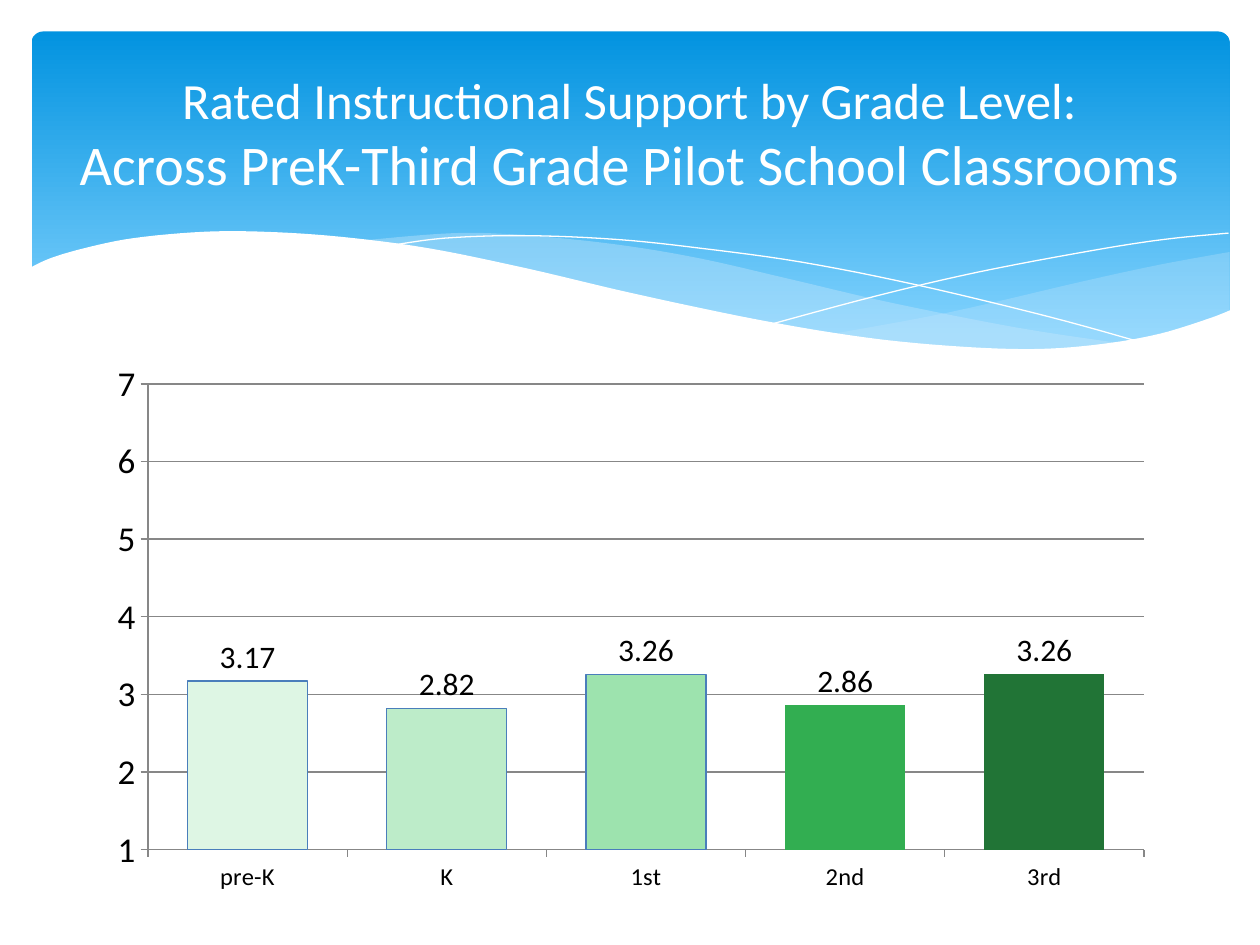
import pptx
import pptx.chart.data
import pptx.dml.color
import pptx.enum.chart
import pptx.enum.shapes
import pptx.enum.text
import pptx.oxml
import pptx.oxml.ns
import pptx.util
from lxml import etree

COLORS = {
    "white": "FFFFFF", "black": "000000", "sky_top": "0293E0", "sky_bottom": "83D3FE",
    "swell": "C6E7FC", "series": "31B6FD", "outline": "4A7EBB", "grid": "878787",
}
GRADES = {
    "pre-K": (3.17, "DEF6E4"), "K": (2.82, "BDECC9"), "1st": (3.26, "9DE3AE"),
    "2nd": (2.86, "32AE51"), "3rd": (3.26, "217436"),
}
OUTLINED_BARS = 3
FONT = "Calibri"
UNIT = pptx.util.Inches(0.25)
COLUMNS, ROWS = 40, 30

RIGHT_SWELL = [
    [(39.04, 8), (36.84, 8.4), (34.44, 8.92), (30.12, 9.92), (26.44, 10.6)],
    [(26.44, 10.6), (28.76, 10.88), (31.24, 11.08), (33.4, 11.08), (35.24, 10.92),
     (37.12, 10.52), (38.52, 10.08), (39.04, 9.88)],
]
LEFT_SWELL = [
    [(35.72, 10.92), (32.28, 10.4), (28.24, 9.6), (25.16, 8.88), (22.2, 8.2),
     (19.56, 7.76), (16.8, 7.48), (14.44, 7.4), (11.44, 7.64)],
    [(11.44, 7.64), (14.48, 8.12), (17.96, 8.88), (22.64, 9.92), (26, 10.56),
     (28.9, 10.96), (31.84, 11.12), (33.92, 11.08), (35.72, 10.92)],
]
FALLING_LINE = [[(12.36, 7.8), (14.12, 7.56), (16.64, 7.48), (19.56, 7.6), (22.24, 7.88),
                 (25.44, 8.32), (29.08, 9.04), (33.24, 10.04), (36.28, 10.88)]]
RISING_LINE = [[(24.52, 10.28), (27.8, 9.4), (31.04, 8.64), (34.64, 7.96),
                (36.96, 7.6), (39, 7.4)]]
WAVE = [
    [(0.92, 8.52), (1.6, 8.2), (2.68, 7.88), (4.24, 7.56), (6.44, 7.36), (8.44, 7.36),
     (10.84, 7.52), (13.6, 7.88), (16.72, 8.52), (20.12, 9.32), (24.12, 10.16),
     (27.52, 10.72), (30.44, 11), (32.92, 11.08), (35, 10.92), (36.8, 10.6),
     (38.36, 10.12), (39.08, 9.84)],
    [(39.08, 13.16), (0.92, 13.16)],
]


def color(name):
    return pptx.dml.color.RGBColor.from_string(COLORS.get(name, name))


def cells(*lengths):
    return [round(length * UNIT) for length in lengths]


def smooth(points, steps=6):
    padded = [points[0], *points, points[-1]]
    curve = [points[0]]
    for a, b, c, d in zip(padded, padded[1:], padded[2:], padded[3:]):
        for step in range(1, steps + 1):
            t = step / steps
            curve.append(tuple(
                q + t * (r - p) / 2 + t * t * (2 * p - 5 * q + 4 * r - s) / 2
                + t ** 3 * (3 * q - p - 3 * r + s) / 2
                for p, q, r, s in zip(a, b, c, d)))
    return curve


def add_outline(slide, curves, fill=None, opacity=100):
    points = [cells(*point) for curve in curves for point in smooth(curve)]
    builder = slide.shapes.build_freeform(*points[0], scale=1.0)
    builder.add_line_segments(points[1:], close=fill is not None)
    shape = builder.convert_to_shape()
    shape.shadow.inherit = False
    if fill is None:
        shape.fill.background()
        shape.line.color.rgb = color("white")
        shape.line.width = pptx.util.Pt(0)
        return
    shape.line.fill.background()
    shape.fill.solid()
    shape.fill.fore_color.rgb = color(fill)
    if opacity < 100:
        value = shape.fill._xPr.find(".//" + pptx.oxml.ns.qn("a:srgbClr"))
        etree.SubElement(value, pptx.oxml.ns.qn("a:alpha"), val=str(opacity * 1000))


def add_panel(slide):
    shape = slide.shapes.add_shape(
        pptx.enum.shapes.MSO_SHAPE.ROUNDED_RECTANGLE, *cells(1, 1, 38.04, 10.8))
    shape.adjustments[0] = 0.034
    shape.shadow.inherit = False
    shape.line.fill.background()
    shape.fill.gradient()
    shape.fill.gradient_angle = 270
    stops = zip(shape.fill.gradient_stops, ("sky_top", "sky_bottom"), (0, 0.9))
    for stop, name, position in stops:
        stop.color.rgb = color(name)
        stop.position = position


def add_title(slide, lines, sizes):
    text_frame = slide.shapes.add_textbox(*cells(1, 1.48, 38, 5.48)).text_frame
    text_frame.word_wrap = True
    text_frame.vertical_anchor = pptx.enum.text.MSO_ANCHOR.MIDDLE
    paragraph = text_frame.paragraphs[0]
    paragraph.text = "\v".join(lines)
    paragraph.alignment = pptx.enum.text.PP_ALIGN.CENTER
    for run, size in zip(paragraph.runs, sizes):
        style_font(run.font, size, "white")


def style_font(font, size, name="black"):
    font.name = FONT
    font.size = pptx.util.Pt(size)
    font.color.rgb = color(name)


def style_axis(axis, size):
    axis.major_tick_mark = pptx.enum.chart.XL_TICK_MARK.OUTSIDE
    axis.minor_tick_mark = pptx.enum.chart.XL_TICK_MARK.NONE
    axis.format.line.color.rgb = color("grid")
    style_font(axis.tick_labels.font, size)


def place_plot(chart, **shares):
    plot_area = chart._chartSpace.chart.plotArea
    for old in plot_area.findall(pptx.oxml.ns.qn("c:layout")):
        plot_area.remove(old)
    modes = "".join(f'<c:{axis}Mode val="edge"/>' for axis in "xy")
    sizes = "".join(f'<c:{key} val="{share}"/>' for key, share in shares.items())
    plot_area.insert(0, pptx.oxml.parse_xml(
        f'<c:layout {pptx.oxml.ns.nsdecls("c")}><c:manualLayout>'
        f'<c:layoutTarget val="inner"/>{modes}{sizes}</c:manualLayout></c:layout>'))


def add_grade_chart(slide):
    data = pptx.chart.data.CategoryChartData()
    data.categories = list(GRADES)
    data.add_series("Series 1", [value for value, _ in GRADES.values()])
    chart = slide.shapes.add_chart(
        pptx.enum.chart.XL_CHART_TYPE.COLUMN_CLUSTERED, *cells(3, 10, 34, 18.32), data).chart
    chart.has_legend = False
    chart.has_title = False
    style_font(chart.font, 10)
    place_plot(chart, x=0.05, y=0.12, w=0.93, h=0.81)

    style_axis(chart.category_axis, 14)
    axis = chart.value_axis
    style_axis(axis, 20)
    axis.minimum_scale, axis.maximum_scale, axis.major_unit = 1, 7, 1
    axis.tick_labels.number_format = "#,##0"
    axis.tick_labels.number_format_is_linked = False
    axis.major_gridlines.format.line.color.rgb = color("grid")

    plot = chart.plots[0]
    plot.gap_width = 66
    plot.vary_by_categories = False
    series = plot.series[0]
    series.format.fill.solid()
    series.format.fill.fore_color.rgb = color("series")
    for index, (_, bar_color) in enumerate(GRADES.values()):
        bar = series.points[index].format
        bar.fill.solid()
        bar.fill.fore_color.rgb = color(bar_color)
        if index < OUTLINED_BARS:
            bar.line.color.rgb = color("outline")
            bar.line.width = pptx.util.Pt(0.75)

    labels = series.data_labels
    labels.show_value = True
    labels.position = pptx.enum.chart.XL_LABEL_POSITION.OUTSIDE_END
    labels.number_format = "#,##0.00"
    labels.number_format_is_linked = False
    style_font(labels.font, 18)


def main():
    presentation = pptx.Presentation()
    presentation.slide_width, presentation.slide_height = cells(COLUMNS, ROWS)
    slide = presentation.slides.add_slide(presentation.slide_layouts[6])
    add_panel(slide)
    add_outline(slide, RIGHT_SWELL, "swell", 29)
    add_outline(slide, LEFT_SWELL, "swell", 40)
    add_outline(slide, FALLING_LINE)
    add_outline(slide, RISING_LINE)
    add_outline(slide, WAVE, "white")
    add_title(slide, ["Rated Instructional Support by Grade Level:",
                      "Across PreK-Third Grade Pilot School Classrooms"], [29, 32])
    add_grade_chart(slide)
    presentation.save("out.pptx")


if __name__ == "__main__":
    main()
